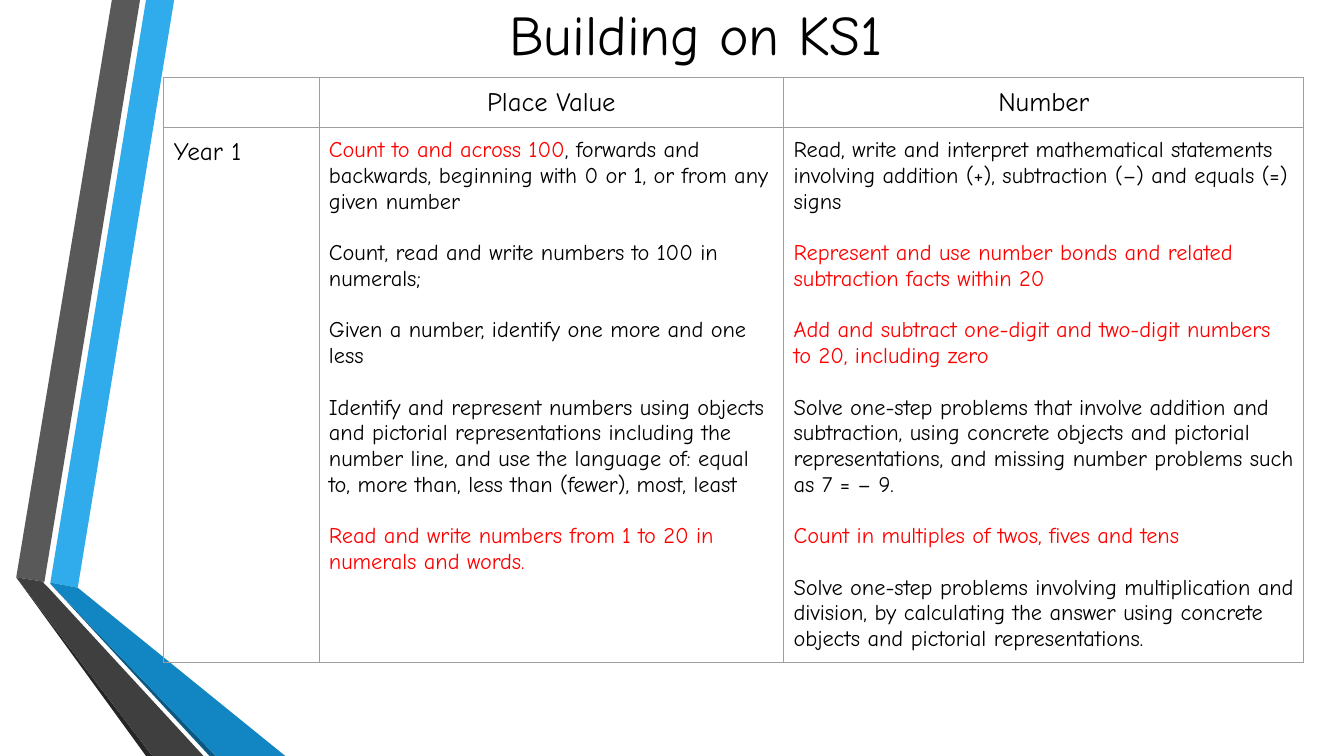
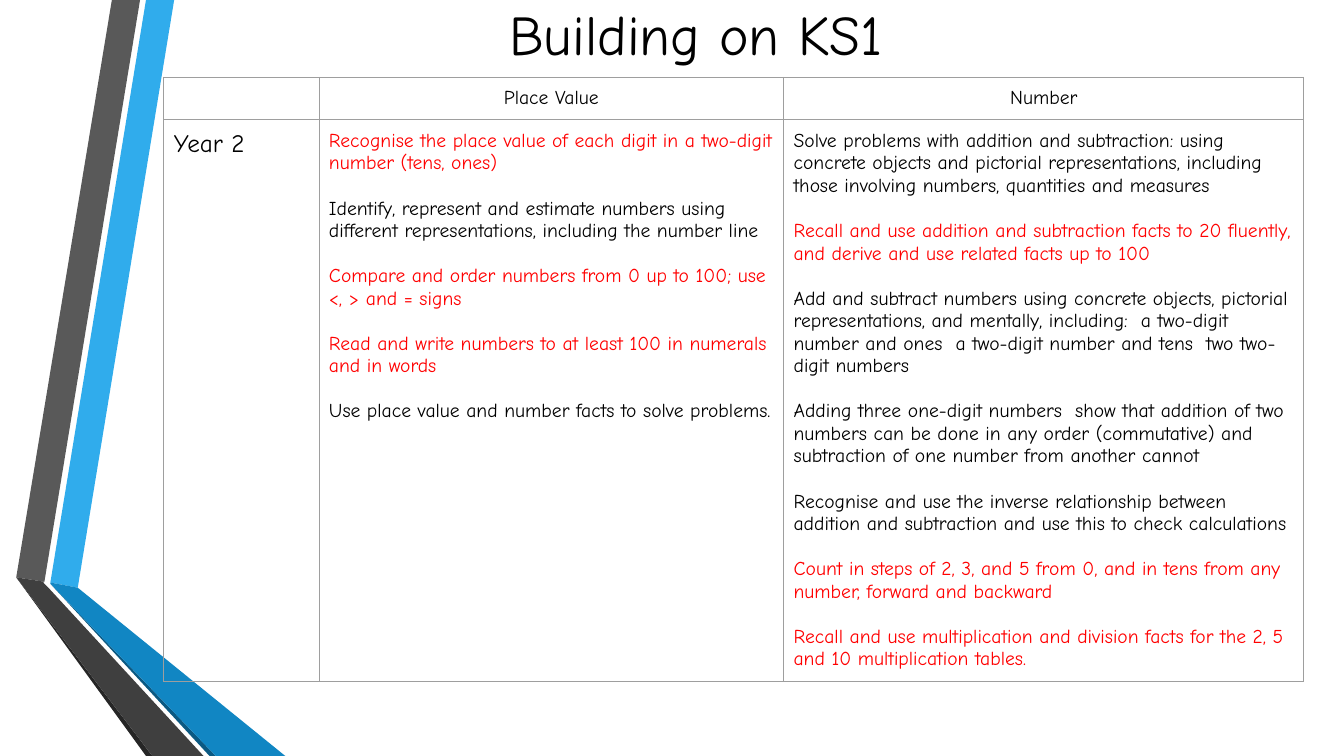
from dataclasses import dataclass
from typing import NamedTuple

from lxml.etree import SubElement
from pptx import Presentation
from pptx.dml.color import RGBColor
from pptx.enum.text import MSO_ANCHOR as Anchor, PP_ALIGN as Align
from pptx.oxml.ns import qn
from pptx.util import Cm, Pt

BLACK = RGBColor(0x00, 0x00, 0x00)
RED = RGBColor(0xFF, 0x00, 0x00)
RULE = RGBColor(0x9E, 0x9E, 0x9E)
SKY = RGBColor(0x30, 0xAC, 0xEC)
BLUE = RGBColor(0x11, 0x86, 0xC3)
NAVY = RGBColor(0x0B, 0x59, 0x82)
GREY = RGBColor(0x59, 0x59, 0x59)
DARK = RGBColor(0x3F, 0x3F, 0x3F)
COAL = RGBColor(0x26, 0x26, 0x26)
FONT = "Comic Neue"
TITLE = "Building on KS1"
HEADS = ("Place Value", "Number")
WIDTHS = (3.91, 11.71, 13.11)
LINE = 1.15
INSET = 0.25


class Band(NamedTuple):
    """A filled outline, its points in hundredths of a centimetre."""
    fill: RGBColor
    points: tuple[tuple[int, int], ...]


class Goal(NamedTuple):
    """One aim: a red part, then a black part."""
    red: str = ""
    black: str = ""


@dataclass
class Year:
    """The content and sizes of one year's slide."""
    name: str
    head: int
    size: int
    rows: tuple[float, float]
    place: list[Goal]
    number: list[Goal]


BANDS = (
    Band(SKY, ((127, 1468), (196, 1481), (439, 0), (368, 0))),
    Band(GREY, ((353, 0), (282, 0), (41, 1455), (112, 1466))),
    Band(COAL, ((41, 1455), (368, 1905), (384, 1905))),
    Band(NAVY, ((127, 1471), (528, 1905), (544, 1905))),
    Band(BLUE, ((127, 1471), (544, 1905), (719, 1905), (196, 1481), (127, 1468))),
    Band(DARK, ((513, 1905), (122, 1481), (109, 1468), (112, 1466), (41, 1455), (384, 1905))),
)

YEARS = (
    Year(
        "Year 1", 19, 16, (1.26, 13.48),
        [
            Goal("Count to and across 100", ", forwards and backwards, beginning with 0 or 1, "
                 "or from any given number"),
            Goal(black="Count, read and write numbers to 100 in numerals;"),
            Goal(black="Given a number, identify one more and one less"),
            Goal(black="Identify and represent numbers using objects and pictorial representations "
                 "including the number line, and use the language of: equal to, more than, "
                 "less than (fewer), most, least"),
            Goal("Read and write numbers from 1 to 20 in numerals and words."),
        ],
        [
            Goal(black="Read, write and interpret mathematical statements involving addition (+), "
                 "subtraction (–) and equals (=) signs"),
            Goal("Represent and use number bonds and related subtraction facts within 20"),
            Goal("Add and subtract one-digit and two-digit numbers to 20, including zero"),
            Goal(black="Solve one-step problems that involve addition and subtraction, using concrete "
                 "objects and pictorial representations, and missing number problems such as 7 = – 9."),
            Goal("Count in multiples of twos, fives and tens"),
            Goal(black="Solve one-step problems involving multiplication and division, by calculating "
                 "the answer using concrete objects and pictorial representations."),
        ],
    ),
    Year(
        "Year 2", 14, 14, (1.06, 14.14),
        [
            Goal("Recognise the place value of each digit in a two-digit number (tens, ones)"),
            Goal(black="Identify, represent and estimate numbers using different representations, "
                 "including the number line"),
            Goal("Compare and order numbers from 0 up to 100; use <, > and = signs"),
            Goal("Read and write numbers to at least 100 in numerals and in words"),
            Goal(black="Use place value and number facts to solve problems."),
        ],
        [
            Goal(black="Solve problems with addition and subtraction: using concrete objects and "
                 "pictorial representations, including those involving numbers, quantities and measures"),
            Goal("Recall and use addition and subtraction facts to 20 fluently, and derive and use "
                 "related facts up to 100"),
            Goal(black="Add and subtract numbers using concrete objects, pictorial representations, "
                 "and mentally, including:  a two-digit number and ones  a two-digit number and tens  "
                 "two two-digit numbers"),
            Goal(black="Adding three one-digit numbers  show that addition of two numbers can be done "
                 "in any order (commutative) and subtraction of one number from another cannot"),
            Goal(black="Recognise and use the inverse relationship between addition and subtraction "
                 "and use this to check calculations"),
            Goal("Count in steps of 2, 3, and 5 from 0, and in tens from any number, forward and backward"),
            Goal("Recall and use multiplication and division facts for the 2, 5 and 10 "
                 "multiplication tables."),
        ],
    ),
)


def write(frame, goals: list[Goal], *, size: int, align=Align.LEFT) -> None:
    """Fill a text frame with goals, one line apart."""
    frame.word_wrap = True
    for i, goal in enumerate(goals):
        para = frame.add_paragraph() if i else frame.paragraphs[0]
        para.alignment = align
        para.space_before = Pt(size * LINE if i else 0)
        for text, tint in ((goal.red, RED), (goal.black, BLACK)):
            if text:
                run = para.add_run()
                run.text = text
                run.font.name = FONT
                run.font.size = Pt(size)
                run.font.color.rgb = tint


def draw_bands(slide, layout) -> None:
    """Draw the side bands and hand them to the layout."""
    for i, band in enumerate(BANDS):
        pen = slide.shapes.build_freeform(*band.points[0], scale=Cm(0.01))
        pen.add_line_segments(band.points[1:], close=True)
        shape = pen.convert_to_shape()
        shape.shadow.inherit = False
        shape.fill.solid()
        shape.fill.fore_color.rgb = band.fill
        shape.line.fill.background()
        layout.shapes.element.insert(i + 2, shape.element)


def style_cell(cell, inset: float) -> None:
    """Give a cell thin borders, even insets and no fill."""
    cell.margin_left = cell.margin_right = Cm(INSET)
    cell.margin_top = cell.margin_bottom = Cm(inset)
    props = cell._tc.get_or_add_tcPr()
    for side in ("a:lnL", "a:lnR", "a:lnT", "a:lnB"):
        line = SubElement(props, qn(side), w=str(Pt(0.75)))
        fill = SubElement(line, qn("a:solidFill"))
        SubElement(fill, qn("a:srgbClr"), val=str(RULE))
    cell.fill.background()


def set_title(slide) -> None:
    """Place and write the slide title."""
    title = slide.shapes.title
    title.left, title.top, title.width, title.height = Cm(3.62), Cm(-0.71), Cm(27.84), Cm(3.1)
    title.text_frame.vertical_anchor = Anchor.MIDDLE
    write(title.text_frame, [Goal(black=TITLE)], size=40, align=Align.CENTER)


def add_grid(slide, year: Year) -> None:
    """Add the table of goals for one year."""
    frame = slide.shapes.add_table(2, 3, Cm(4.13), Cm(1.95), Cm(sum(WIDTHS)), Cm(sum(year.rows)))
    table = frame.table
    table.first_row = table.horz_banding = False
    for col, width in zip(table.columns, WIDTHS):
        col.width = Cm(width)
    for row, height in zip(table.rows, year.rows):
        row.height = Cm(height)
    for cell in table.iter_cells():
        style_cell(cell, INSET)
    blank = table.cell(0, 0)
    blank.margin_top = blank.margin_bottom = 0
    for col, head in enumerate(HEADS, 1):
        write(table.cell(0, col).text_frame, [Goal(black=head)], size=year.head, align=Align.CENTER)
    write(table.cell(1, 0).text_frame, [Goal(black=year.name)], size=18)
    for col, goals in enumerate((year.place, year.number), 1):
        write(table.cell(1, col).text_frame, goals, size=year.size)


def main() -> None:
    """Build and save the deck."""
    deck = Presentation()
    deck.slide_width, deck.slide_height = Cm(33.87), Cm(19.05)
    layout = deck.slide_layouts.get_by_name("Title Only")
    for i, year in enumerate(YEARS):
        slide = deck.slides.add_slide(layout)
        if i == 0:
            draw_bands(slide, layout)
        set_title(slide)
        add_grid(slide, year)
    deck.save("out.pptx")


if __name__ == "__main__":
    main()
